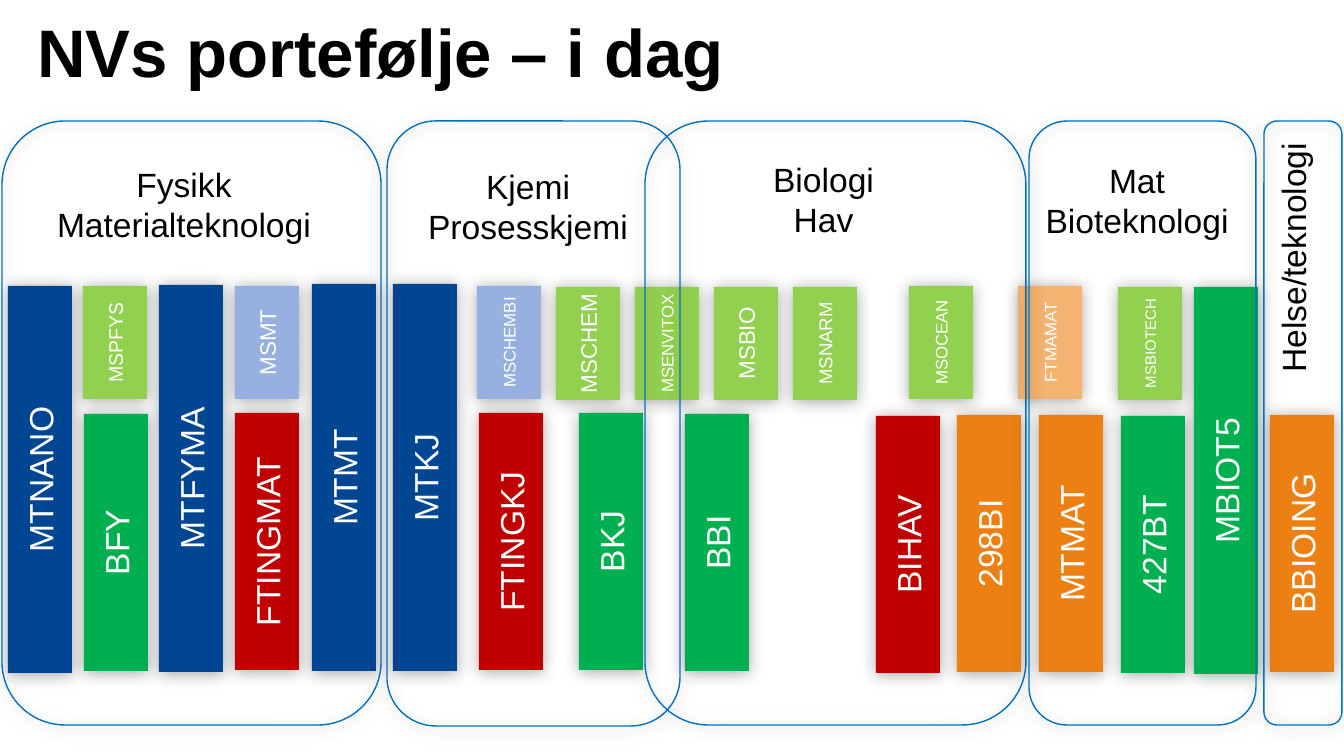
"""Build the slide that maps NV's study programmes onto five subject areas."""
import pptx
import pptx.util
import pptx.dml.color
import pptx.enum.shapes
import pptx.enum.text
import pptx.oxml
import pptx.oxml.ns

RGBColor = pptx.dml.color.RGBColor
Anchor = pptx.enum.text.MSO_ANCHOR
Align = pptx.enum.text.PP_ALIGN
Preset = pptx.enum.shapes.MSO_SHAPE

BLACK = RGBColor(0x00, 0x00, 0x00)
WHITE = RGBColor(0xFF, 0xFF, 0xFF)
NAVY = RGBColor(0x01, 0x46, 0x93)
GREEN = RGBColor(0x00, 0xB0, 0x50)
LIME = RGBColor(0x92, 0xD0, 0x50)
RED = RGBColor(0xC0, 0x00, 0x00)
ORANGE = RGBColor(0xED, 0x80, 0x13)
PEACH = RGBColor(0xF4, 0xB3, 0x71)
PALE_BLUE = RGBColor(0x96, 0xB0, 0xDF)
OUTLINE = RGBColor(0x00, 0x70, 0xC0)

FONT = "Arial"
EMU_PER_PX = 914400 / 134.4
BAR_WIDTH = 64
FULL, LOWER, UPPER = 387, 257, 113
AREA_TOP = 121
HEADING_SIZE = (290, 95)

TITLE = "NVs portefølje – i dag"

PROGRAMMES = [
    ("MTNANO", 8, 286, FULL, NAVY, 18),
    ("MSPFYS", 83, 286, UPPER, LIME, 10.5),
    ("BFY", 84, 414, LOWER, GREEN, 18),
    ("MTFYMA", 159, 285, FULL, NAVY, 18),
    ("MSMT", 235, 286, UPPER, PALE_BLUE, 12),
    ("FTINGMAT", 235, 413, LOWER, RED, 18),
    ("MTMT", 312, 284, FULL, NAVY, 18),
    ("MTKJ", 393, 284, FULL, NAVY, 18),
    ("MSCHEMBI", 477, 286, UPPER, PALE_BLUE, 9),
    ("FTINGKJ", 479, 413, LOWER, RED, 18),
    ("MSCHEM", 556, 287, UPPER, LIME, 12),
    ("BKJ", 579, 413, LOWER, GREEN, 18),
    ("MSENVITOX", 635, 287, UPPER, LIME, 9),
    ("BBI", 685, 414, LOWER, GREEN, 18),
    ("MSBIO", 714, 287, UPPER, LIME, 12),
    ("MSNARM", 793, 287, UPPER, LIME, 10),
    ("BIHAV", 876, 416, LOWER, RED, 18),
    ("MSOCEAN", 909, 286, UPPER, LIME, 9),
    ("298BI", 957, 415, LOWER, ORANGE, 18),
    ("FTMAMAT", 1018, 286, UPPER, PEACH, 9),
    ("MTMAT", 1039, 415, LOWER, ORANGE, 18),
    ("MSBIOTECH", 1118, 287, UPPER, LIME, 8),
    ("427BT", 1121, 416, LOWER, GREEN, 18),
    ("MBIOT5", 1194, 287, FULL, GREEN, 18),
    ("BBIOING", 1270, 415, LOWER, ORANGE, 18),
]

AREAS = [(2, 379, 604), (387, 293, 605), (645, 381, 604), (1029, 227, 604), (1264, 78, 604)]

HEADINGS = [
    (39, 157, [("Fysikk Materialteknologi", 0)]),
    (383, 159, [("Kjemi Prosesskjemi", 0)]),
    (683, 152, [("Biologi", 9), ("Hav", 0)]),
    (1001, 153, [("Mat", 18), ("Bioteknologi", 0)]),
]
HEALTH_HEADING = ("Helse/teknologi", (1266, 121, 67, 265))

SHADOW = (
    f'<a:effectLst {pptx.oxml.ns.nsdecls("a")}>'
    '<a:outerShdw blurRad="114300" dist="12700" dir="5400000" rotWithShape="0">'
    '<a:srgbClr val="000000"><a:alpha val="35000"/></a:srgbClr>'
    '</a:outerShdw></a:effectLst>'
)


def px(length):
    return pptx.util.Emu(round(length * EMU_PER_PX))


def style(paragraph, size, colour, align, bold=False):
    paragraph.alignment = align
    paragraph.font.name = FONT
    paragraph.font.size = pptx.util.Pt(size)
    paragraph.font.bold = bold
    paragraph.font.color.rgb = colour


def turn_upward(shape):
    shape.element.txBody.bodyPr.set("vert", "vert270")


def add_shadowed(slide, preset, box):
    shape = slide.shapes.add_shape(preset, *map(px, box))
    shape.shadow.inherit = False
    properties = shape.element.spPr
    effects = properties.find(pptx.oxml.ns.qn("a:effectLst"))
    properties.replace(effects, pptx.oxml.parse_xml(SHADOW))
    return shape


def add_programme(slide, name, left, top, height, colour, size):
    bar = add_shadowed(slide, Preset.RECTANGLE, (left, top, BAR_WIDTH, height))
    bar.fill.solid()
    bar.fill.fore_color.rgb = colour
    bar.line.fill.background()
    turn_upward(bar)
    frame = bar.text_frame
    frame.word_wrap = False
    frame.vertical_anchor = Anchor.MIDDLE
    frame.text = name
    style(frame.paragraphs[0], size, WHITE, Align.CENTER)


def add_area(slide, left, width, height):
    area = add_shadowed(slide, Preset.ROUNDED_RECTANGLE, (left, AREA_TOP, width, height))
    area.fill.background()
    area.line.color.rgb = OUTLINE
    area.line.width = pptx.util.Pt(0.75)


def add_text(slide, lines, box, size, align, bold=False):
    text_box = slide.shapes.add_textbox(*map(px, box))
    frame = text_box.text_frame
    frame.word_wrap = True
    frame.text = "\n".join(line for line, _ in lines)
    for paragraph, (_, right_indent) in zip(frame.paragraphs, lines):
        style(paragraph, size, BLACK, align, bold)
        if right_indent:
            paragraph._p.get_or_add_pPr().set("marR", str(px(right_indent)))
    return text_box


def main():
    deck = pptx.Presentation()
    deck.slide_width, deck.slide_height = px(1344), px(756)
    slide = deck.slides.add_slide(deck.slide_layouts[6])

    title = add_text(slide, [(TITLE, 0)], (24, 3, 1161, 95), 36, Align.LEFT, bold=True)
    title.text_frame.vertical_anchor = Anchor.BOTTOM
    for programme in PROGRAMMES:
        add_programme(slide, *programme)
    for area in AREAS:
        add_area(slide, *area)
    for left, top, lines in HEADINGS:
        add_text(slide, lines, (left, top, *HEADING_SIZE), 18, Align.CENTER)
    health, health_box = HEALTH_HEADING
    turn_upward(add_text(slide, [(health, 0)], health_box, 18, Align.LEFT))

    deck.save("out.pptx")


if __name__ == "__main__":
    main()
